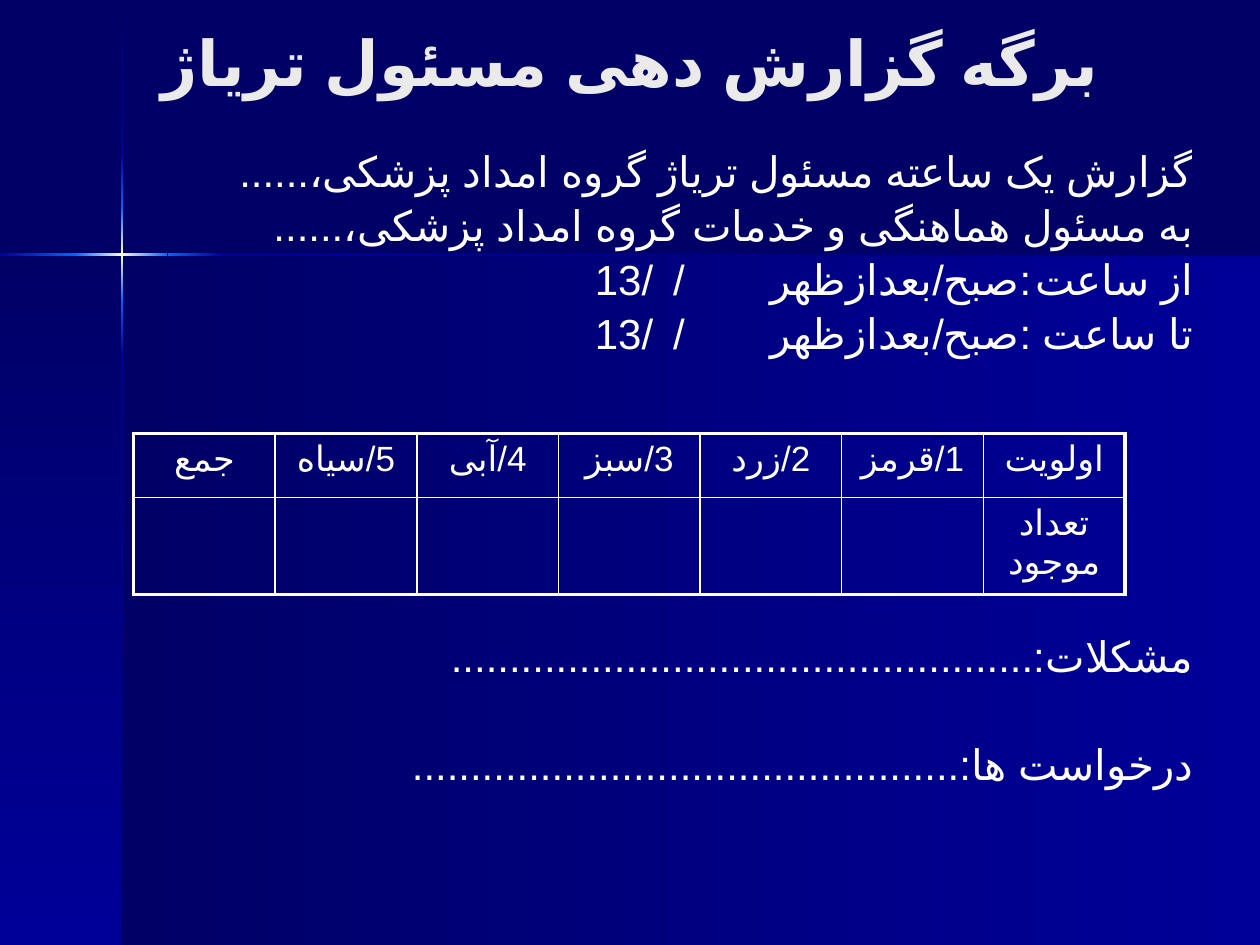
from lxml import etree
from pptx import Presentation
from pptx.dml.color import RGBColor
from pptx.enum.shapes import MSO_SHAPE
from pptx.enum.text import MSO_ANCHOR, MSO_AUTO_SIZE, PP_ALIGN
from pptx.oxml.ns import qn
from pptx.util import Inches, Pt

RECTANGLE = MSO_SHAPE.RECTANGLE
BOTTOM, TOP = MSO_ANCHOR.BOTTOM, MSO_ANCHOR.TOP
CENTER, RIGHT = PP_ALIGN.CENTER, PP_ALIGN.RIGHT
NO_FIT = MSO_AUTO_SIZE.NONE

WIDTH, HEIGHT = 10, 7.5
NAVY, BLUE, BRIGHT, GLOW = "000066", "000099", "0066FF", "FFFFCC"
WHITE, PALE = "FFFFFF", "EAEAEA"
CROSS_X, CROSS_Y, BEAM = 0.97, 2.02, 0.02
ACROSS, DOWN = 0, 90

TITLE = "برگه گزارش دهی مسئول تریاژ"
LINES = [
    ("گزارش یک ساعته مسئول تریاژ گروه امداد پزشکی،......", 0),
    ("به مسئول هماهنگی و خدمات گروه امداد پزشکی،......", 0),
    ("از ساعت\t:\tصبح/بعدازظهر\t/\t/\t13", 0),
    ("تا ساعت\t:\tصبح/بعدازظهر\t/\t/\t13", 0),
    ("مشکلات:" + "." * 50, 5),
    ("درخواست ها:" + "." * 47, 1),
]
TAB_STOPS = [1.38, 1.8, 4.13, 4.38, 4.67]
LINE_PITCH, LINE_GAP = 30.7, 5
ROWS = [
    ["جمع", "5/سیاه", "4/آبی", "3/سبز", "2/زرد", "1/قرمز", "اولویت"],
    ["", "", "", "", "", "", "تعداد موجود"],
]
ROW_HEIGHTS = [0.51, 0.77]
TABLE_LEFT, TABLE_TOP, TABLE_WIDTH = 1.06, 3.44, 7.87

PANELS = [
    (CROSS_X, CROSS_Y, WIDTH - CROSS_X, HEIGHT - CROSS_Y, ACROSS),
    (0, CROSS_Y, CROSS_X, HEIGHT - CROSS_Y, DOWN),
]
BEAM_COLORS = [
    [NAVY, BLUE],
    [BLUE, BRIGHT],
    [BRIGHT, GLOW, BRIGHT],
    [BRIGHT, BLUE],
    [BLUE, NAVY],
]
VERTICAL_STOPS = [0, 1.21, 1.65, 2.38, 2.82, HEIGHT]
HORIZONTAL_STOPS = [0, 0.6, 1.33, 1.77, WIDTH]


def color(value):
    return RGBColor.from_string(value)


def add_child(parent, tag, **attributes):
    return etree.SubElement(parent, qn(tag), {k: str(v) for k, v in attributes.items()})


def write(para, text, size=24, font="Lato", ink=WHITE, bold=False, align=RIGHT):
    para.alignment = align
    para._p.get_or_add_pPr().set("rtl", "1")
    span = para.add_run()
    span.text = text
    span.font.size, span.font.name, span.font.bold = Pt(size), font, bold
    span.font.color.rgb = color(ink)
    properties = span._r.get_or_add_rPr()
    properties.set("lang", "fa-IR")
    add_child(properties, "a:cs", typeface="Arial")


def add_gradient(page, left, top, width, height, colors, angle):
    shape = page.shapes.add_shape(
        RECTANGLE, Inches(left), Inches(top), Inches(width), Inches(height))
    shape.shadow.inherit = False
    shape.line.fill.background()
    shape.fill.gradient()
    shape.fill.gradient_angle = -angle % 360
    stops = shape.element.spPr.find(qn("a:gradFill")).find(qn("a:gsLst"))
    for stop in list(stops):
        stops.remove(stop)
    for index, value in enumerate(colors):
        stop = add_child(stops, "a:gs", pos=100000 * index // (len(colors) - 1))
        add_child(stop, "a:srgbClr", val=value)


def add_backdrop(page):
    page.background.fill.solid()
    page.background.fill.fore_color.rgb = color(NAVY)
    for left, top, width, height, angle in PANELS:
        add_gradient(page, left, top, width, height, [NAVY, BLUE], angle)
    for start, end, colors in zip(VERTICAL_STOPS, VERTICAL_STOPS[1:], BEAM_COLORS):
        add_gradient(page, CROSS_X - BEAM / 2, start, BEAM, end - start, colors, DOWN)
    for start, end, colors in zip(HORIZONTAL_STOPS, HORIZONTAL_STOPS[1:], BEAM_COLORS[1:]):
        add_gradient(page, start, CROSS_Y - BEAM / 2, end - start, BEAM, colors, ACROSS)


def add_title(page):
    title = page.shapes.title
    title.left, title.top = Inches(0.75), Inches(0.21)
    title.width, title.height = Inches(8.5), Inches(0.63)
    frame = title.text_frame
    frame.auto_size, frame.vertical_anchor = NO_FIT, BOTTOM
    write(frame.paragraphs[0], TITLE, size=36, ink=PALE, bold=True, align=CENTER)
    title.element.getparent().append(title.element)


def add_form_lines(page):
    box = page.shapes.add_textbox(Inches(0.2), Inches(1.15), Inches(9.37), Inches(5.98))
    frame = box.text_frame
    frame.word_wrap, frame.auto_size, frame.vertical_anchor = True, NO_FIT, TOP
    for index, (text, skipped) in enumerate(LINES):
        para = frame.add_paragraph() if index else frame.paragraphs[0]
        write(para, text)
        para.line_spacing = 0.9
        para.space_before = Pt(round(LINE_GAP + skipped * LINE_PITCH, 1))
        if "\t" in text:
            tabs = add_child(para._p.get_or_add_pPr(), "a:tabLst")
            for stop in TAB_STOPS:
                add_child(tabs, "a:tab", pos=Inches(stop), algn="l")


def set_borders(cell, widths):
    properties = cell._tc.get_or_add_tcPr()
    for index, (side, width) in enumerate(widths.items()):
        line = etree.Element(qn(f"a:ln{side}"), w=str(Pt(width)))
        add_child(add_child(line, "a:solidFill"), "a:srgbClr", val=WHITE)
        properties.insert(index, line)


def add_priority_table(page):
    row_count, column_count = len(ROWS), len(ROWS[0])
    table = page.shapes.add_table(
        row_count, column_count, Inches(TABLE_LEFT), Inches(TABLE_TOP),
        Inches(TABLE_WIDTH), Inches(sum(ROW_HEIGHTS))).table
    table.first_row = table.horz_banding = False
    for column in table.columns:
        column.width = Inches(TABLE_WIDTH / column_count)
    for r, (height, texts) in enumerate(zip(ROW_HEIGHTS, ROWS)):
        table.rows[r].height = Inches(height)
        for c, text in enumerate(texts):
            cell = table.cell(r, c)
            cell.fill.background()
            if text:
                write(cell.text_frame.paragraphs[0], text, size=20, font="Arial", align=CENTER)
            outer = {"L": c == 0, "R": c == column_count - 1,
                     "T": r == 0, "B": r == row_count - 1}
            set_borders(cell, {side: 2.25 if edge else 1 for side, edge in outer.items()})


def main():
    deck = Presentation()
    deck.slide_width, deck.slide_height = Inches(WIDTH), Inches(HEIGHT)
    page = deck.slides.add_slide(deck.slide_layouts[5])
    add_backdrop(page)
    add_title(page)
    add_form_lines(page)
    add_priority_table(page)
    deck.save("out.pptx")


if __name__ == "__main__":
    main()
